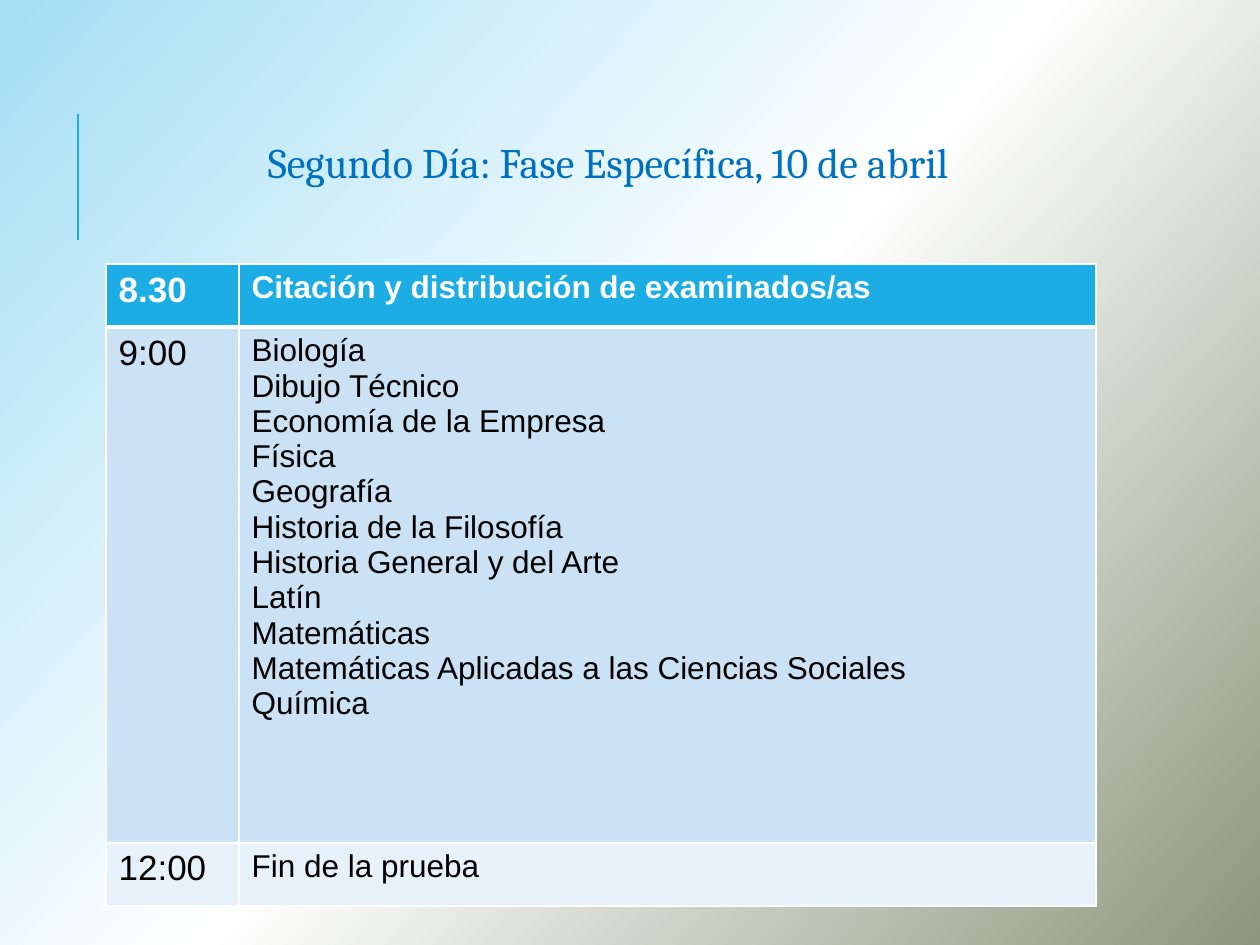
from copy import deepcopy

from lxml import etree
from pptx import Presentation
from pptx.dml.color import RGBColor
from pptx.enum.shapes import MSO_CONNECTOR
from pptx.enum.text import MSO_ANCHOR, PP_ALIGN
from pptx.oxml.ns import qn
from pptx.util import Emu, Pt

STRAIGHT = MSO_CONNECTOR.STRAIGHT
MIDDLE = MSO_ANCHOR.MIDDLE
CENTER = PP_ALIGN.CENTER

EMU_PER_PX = 914400 / 126
BACKGROUND_STOPS = [(0, "A4DEF4"), (0.5, "FFFFFF"), (1, "8A977D")]
BACKGROUND_ANGLE = 42
ACCENT = "1CADE4"
WHITE = "FFFFFF"
BLACK = "000000"
TITLE_COLOR = "0070C0"
ROW_FILLS = [ACCENT, "CBE2F5", "E7F1FA"]
ROW_HEIGHTS = [63, 516, 63]
COLUMN_WIDTHS = [133, 857]
COLUMN_FONT_SIZES = [20, 18]

TITLE = "Segundo Día: Fase Específica, 10 de abril"
SUBJECTS = [
    "Biología",
    "Dibujo Técnico",
    "Economía de la Empresa",
    "Física",
    "Geografía",
    "Historia de la Filosofía",
    "Historia General y del Arte",
    "Latín",
    "Matemáticas",
    "Matemáticas Aplicadas a las Ciencias Sociales",
    "Química",
]
SCHEDULE = [
    ("8.30", "Citación y distribución de examinados/as"),
    ("9:00", "\n".join(SUBJECTS)),
    ("12:00", "Fin de la prueba"),
]


def px(length):
    """Turn a length in px into EMU."""
    return Emu(round(length * EMU_PER_PX))


def color(value):
    """Turn a hex string into a colour."""
    return RGBColor.from_string(value)


def format_text(text_frame, font_name, size, font_color, bold=False):
    """Format every run of a text frame."""
    for paragraph in text_frame.paragraphs:
        for run in paragraph.runs:
            run.font.name = font_name
            run.font.size = Pt(size)
            run.font.bold = bold
            run.font.color.rgb = color(font_color)


def paint_background(slide):
    """Fill the slide with the diagonal three-colour gradient."""
    fill = slide.background.fill
    fill.gradient()
    fill.gradient_angle = 360 - BACKGROUND_ANGLE
    stop_list = slide.element.find(".//" + qn("a:gsLst"))
    stop_list.append(deepcopy(stop_list[0]))
    for stop, (position, stop_color) in zip(fill.gradient_stops, BACKGROUND_STOPS):
        stop.position = position
        stop.color.rgb = color(stop_color)


def add_accent_line(slide, left, top, height):
    """Draw the vertical accent line beside the title."""
    line = slide.shapes.add_connector(
        STRAIGHT, px(left), px(top + height), px(left), px(top)
    )
    line.line.color.rgb = color(ACCENT)
    line.line.width = Pt(1.5)
    etree.SubElement(line.element.spPr, qn("a:effectLst"))


def add_title(slide, left, top, width, height):
    """Place the centred title in its box."""
    shape = slide.shapes.add_textbox(px(left), px(top), px(width), px(height))
    text_frame = shape.text_frame
    text_frame.word_wrap = True
    text_frame.vertical_anchor = MIDDLE
    text_frame.text = TITLE
    paragraph = text_frame.paragraphs[0]
    paragraph.alignment = CENTER
    paragraph.line_spacing = 0.8
    format_text(text_frame, "Cambria", 24, TITLE_COLOR)


def set_borders(cell, top, bottom):
    """Give a cell white borders, with top and bottom widths in points."""
    properties = cell._tc.get_or_add_tcPr()
    for side, width in (("L", 1), ("R", 1), ("T", top), ("B", bottom)):
        border = etree.SubElement(properties, qn(f"a:ln{side}"), w=str(Pt(width)))
        fill = etree.SubElement(border, qn("a:solidFill"))
        etree.SubElement(fill, qn("a:srgbClr"), val=WHITE)


def add_schedule(slide, left, top):
    """Place the timetable with its header row."""
    frame = slide.shapes.add_table(
        len(ROW_HEIGHTS), len(COLUMN_WIDTHS), px(left), px(top),
        px(sum(COLUMN_WIDTHS)), px(sum(ROW_HEIGHTS)),
    )
    table = frame.table
    for column, width in zip(table.columns, COLUMN_WIDTHS):
        column.width = px(width)
    for row_index, texts in enumerate(SCHEDULE):
        row = table.rows[row_index]
        row.height = px(ROW_HEIGHTS[row_index])
        header = row_index == 0
        for cell, text, size in zip(row.cells, texts, COLUMN_FONT_SIZES):
            cell.text_frame.text = text
            format_text(
                cell.text_frame, "Arial", size, WHITE if header else BLACK, header
            )
            set_borders(cell, 3 if row_index == 1 else 1, 3 if header else 1)
            cell.fill.solid()
            cell.fill.fore_color.rgb = color(ROW_FILLS[row_index])


def main():
    """Build and save the presentation."""
    presentation = Presentation()
    presentation.slide_width = px(1260)
    presentation.slide_height = px(945)
    slide = presentation.slides.add_slide(presentation.slide_layouts[6])
    paint_background(slide)
    add_accent_line(slide, 78, 114, 126)
    add_title(slide, 106, 81, 1004, 171)
    add_schedule(slide, 106, 264)
    presentation.save("out.pptx")


if __name__ == "__main__":
    main()
